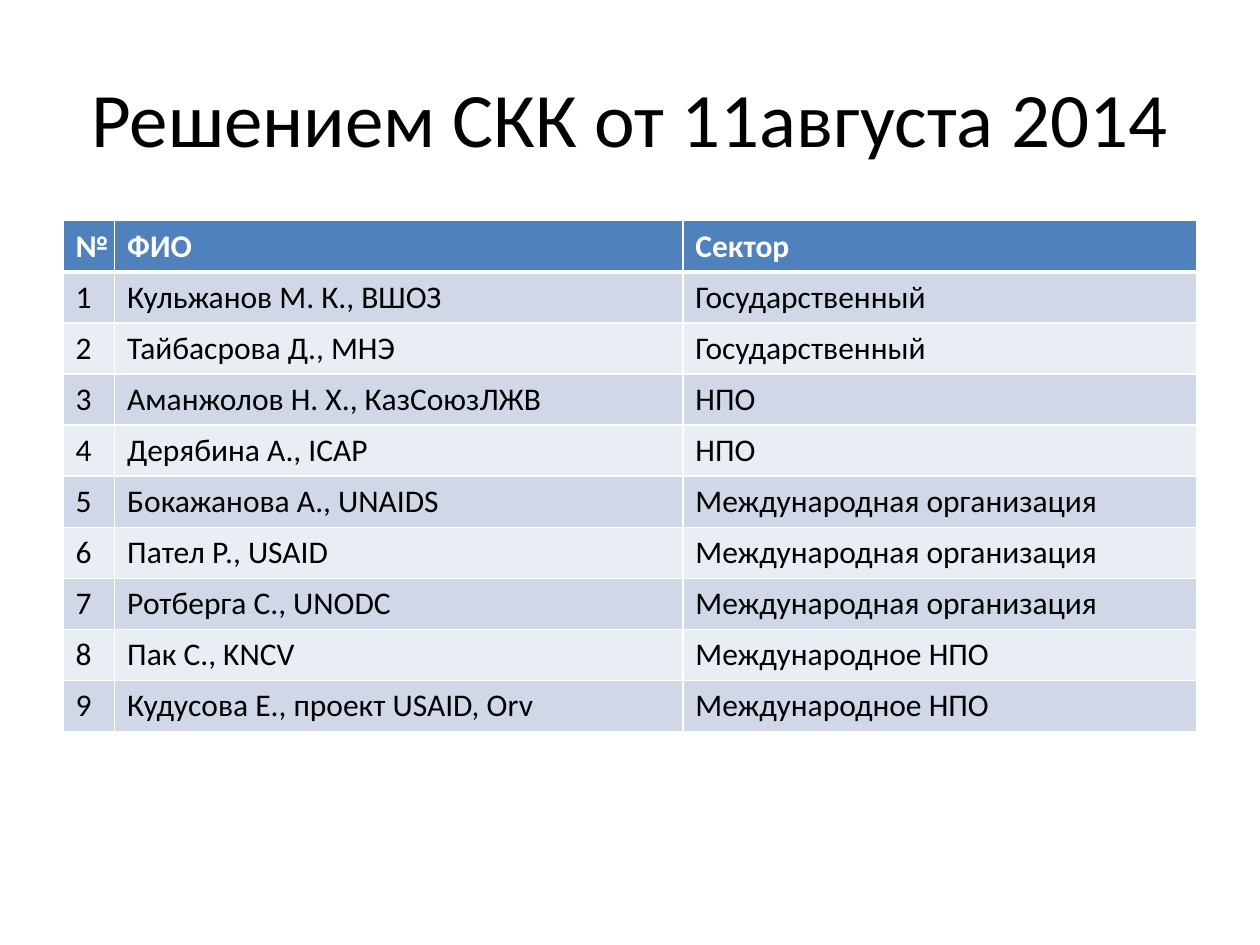
import dataclasses

import pptx
import pptx.dml.color
import pptx.enum.text
import pptx.oxml
import pptx.oxml.ns
import pptx.util
from pptx.util import Cm


@dataclasses.dataclass(frozen=True)
class Theme:
    """Colours, font and sizes of the slide."""
    font: str = "Calibri"
    title_size: int = 44
    body_size: int = 18
    text: str = "000000"
    header_text: str = "FFFFFF"
    header_fill: str = "4F81BD"
    bands: tuple = ("D0D8E8", "E9EDF4")
    border: str = "FFFFFF"
    border_width: int = 1
    header_rule: int = 3


THEME = Theme()
TITLE = "Решением СКК от 11августа 2014"
HEADER = ("№", "ФИО", "Сектор")
MEMBERS = (
    ("Кульжанов М. К., ВШОЗ", "Государственный"),
    ("Тайбасрова Д., МНЭ", "Государственный"),
    ("Аманжолов Н. Х., КазСоюзЛЖВ", "НПО"),
    ("Дерябина А., ICAP", "НПО"),
    ("Бокажанова А., UNAIDS", "Международная организация"),
    ("Пател Р., USAID", "Международная организация"),
    ("Ротберга С., UNODC", "Международная организация"),
    ("Пак С., KNCV", "Международное НПО"),
    ("Кудусова Е., проект USAID, Orv", "Международное НПО"),
)
COLUMN_SHARES = (0.41, 4.51, 4.08)


def add_run(p, text, size, color, bold=False):
    """Add one formatted run to a paragraph."""
    r = p.add_run()
    r.text = text
    r.font.name = THEME.font
    r.font.size = pptx.util.Pt(size)
    r.font.bold = bold
    r.font.color.rgb = pptx.dml.color.RGBColor.from_string(color)


def set_borders(cell, top, bottom):
    """Draw the four borders of a cell, with widths in points."""
    widths = {"L": THEME.border_width, "R": THEME.border_width, "T": top, "B": bottom}
    tcPr = cell._tc.get_or_add_tcPr()
    for i, (side, width) in enumerate(widths.items()):
        ln = pptx.oxml.parse_xml(
            f'<a:ln{side} {pptx.oxml.ns.nsdecls("a")} w="{pptx.util.Pt(width)}">'
            f'<a:solidFill><a:srgbClr val="{THEME.border}"/></a:solidFill></a:ln{side}>')
        tcPr.insert(i, ln)


def place_title(s, left, top, width, height):
    """Place the slide title in its box."""
    sp = s.shapes.title
    sp.left, sp.top, sp.width, sp.height = left, top, width, height
    tf = sp.text_frame
    tf.word_wrap = True
    tf.vertical_anchor = pptx.enum.text.MSO_ANCHOR.MIDDLE
    p = tf.paragraphs[0]
    p.alignment = pptx.enum.text.PP_ALIGN.CENTER
    add_run(p, TITLE, THEME.title_size, THEME.text)


def place_members(s, left, top, width, height):
    """Place the table of members in its box."""
    rows = [HEADER] + [(str(n), *member) for n, member in enumerate(MEMBERS, 1)]
    table = s.shapes.add_table(len(rows), len(HEADER), left, top, width, height).table
    for column, share in zip(table.columns, COLUMN_SHARES):
        column.width = round(width * share / sum(COLUMN_SHARES))
    for i, row in enumerate(rows):
        table.rows[i].height = height // len(rows)
        is_header = i == 0
        fill = THEME.header_fill if is_header else THEME.bands[(i - 1) % 2]
        color = THEME.header_text if is_header else THEME.text
        above = THEME.header_rule if i == 1 else THEME.border_width
        below = THEME.header_rule if is_header else THEME.border_width
        for j, text in enumerate(row):
            cell = table.cell(i, j)
            cell.fill.solid()
            cell.fill.fore_color.rgb = pptx.dml.color.RGBColor.from_string(fill)
            set_borders(cell, above, below)
            add_run(cell.text_frame.paragraphs[0], text, THEME.body_size, color, is_header)


def main():
    """Build the slide and save it."""
    prs = pptx.Presentation()
    prs.slide_width, prs.slide_height = Cm(25.4), Cm(19.05)
    s = prs.slides.add_slide(prs.slide_layouts.get_by_name("Title Only"))
    margin = Cm(1.27)
    width = prs.slide_width - 2 * margin
    place_title(s, margin, Cm(0.76), width, Cm(3.18))
    place_members(s, margin, Cm(4.45), width, Cm(10.3))
    prs.save("out.pptx")


if __name__ == "__main__":
    main()
